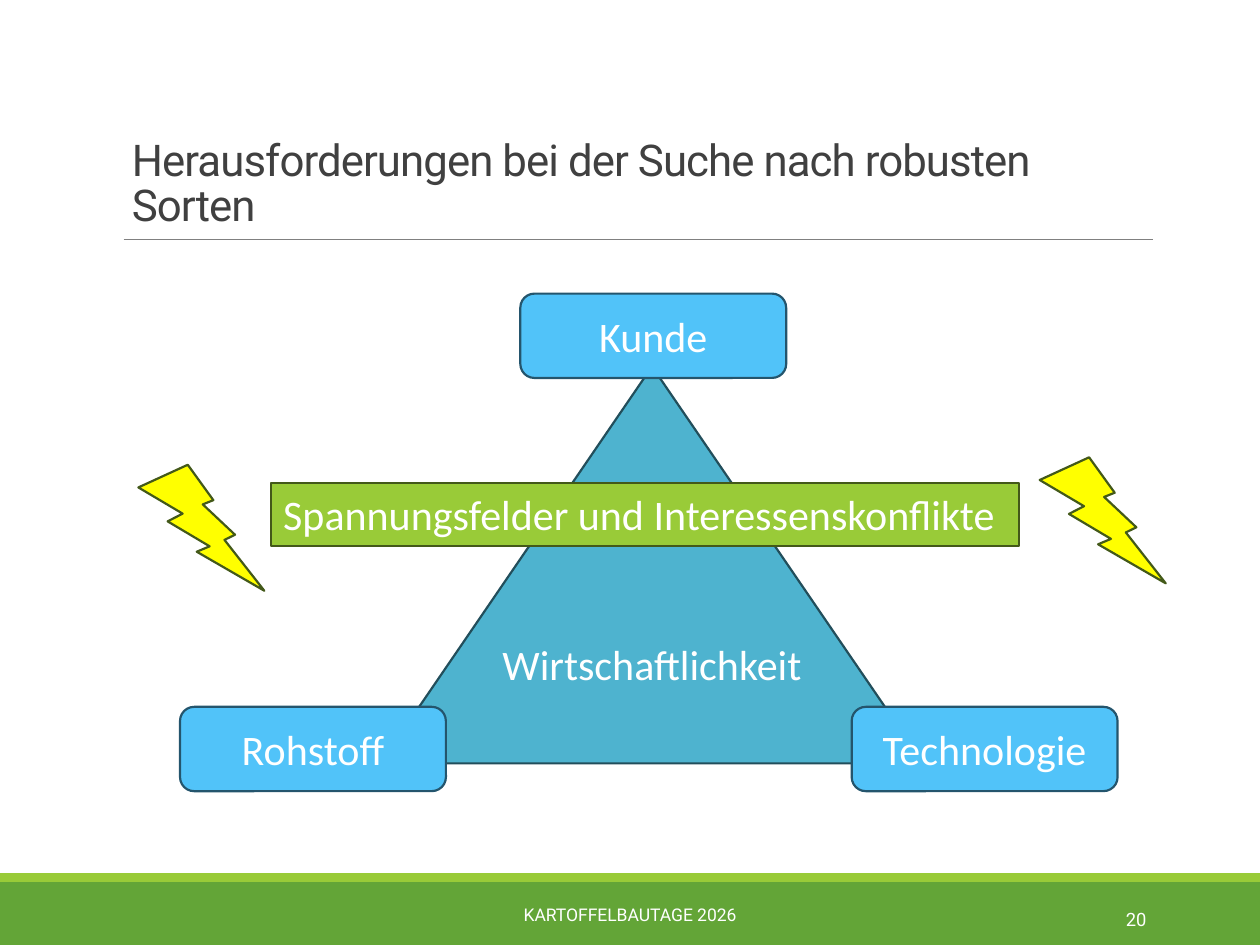
from pptx import Presentation
from pptx.util import Cm, Pt
from pptx.dml.color import RGBColor
from pptx.enum.shapes import MSO_CONNECTOR, MSO_SHAPE
from pptx.enum.text import MSO_ANCHOR, PP_ALIGN
from lxml.etree import SubElement
from pptx.oxml.ns import qn

THEME = {
    "white": "FFFFFF", "title": "404040", "rule": "808080",
    "footer": "63A537", "lime": "99CB38", "lime_line": "435919",
    "teal": "4EB3CF", "teal_line": "224E5B",
    "sky": "51C3F9", "sky_line": "24556D", "bolt": "FFFF00",
    "head_font": "Roboto", "body_font": "Calibri",
    "title_size": 25, "body_size": 24, "footer_size": 10, "number_size": 10.5,
    "line_width": 1.25, "rule_width": 0.5,
}

TITLE = "Herausforderungen bei der Suche nach robusten Sorten"
FOOTER = "KARTOFFELBAUTAGE 2026"
NUMBER = "20"
CENTRE = "Wirtschaftlichkeit"
BANNER = "Spannungsfelder und Interessenskonflikte"
CORNERS = [("Kunde", 10.49, 5.92), ("Rohstoff", 3.63, 14.25), ("Technologie", 17.17, 14.25)]
CORNER_SIZE = (5.36, 1.7)
BOLTS = [(2.79, 9.37), (20.96, 9.22)]
BOLT_SIZE = (2.54, 2.54)


def color(name):
    return RGBColor.from_string(THEME[name])


def write(sp, text, size, font="body_font", ink="white",
          align=PP_ALIGN.CENTER, anchor=MSO_ANCHOR.MIDDLE, wrap=True):
    tf = sp.text_frame
    tf.word_wrap = wrap
    tf.vertical_anchor = anchor
    p = tf.paragraphs[0]
    p.alignment = align
    r = p.add_run()
    r.text = text
    r.font.size = Pt(THEME[size])
    r.font.name = THEME[font]
    r.font.color.rgb = color(ink)
    return p, r


def add_shape(s, kind, box, fill, line=None):
    sp = s.shapes.add_shape(kind, *map(Cm, box))
    sp.shadow.inherit = False
    sp.fill.solid()
    sp.fill.fore_color.rgb = color(fill)
    if line:
        sp.line.color.rgb = color(line)
        sp.line.width = Pt(THEME["line_width"])
    else:
        sp.line.fill.background()
    return sp


def add_text(s, box, text, size, **style):
    return write(s.shapes.add_textbox(*map(Cm, box)), text, size, font="head_font", **style)


def add_frame(s):
    add_shape(s, MSO_SHAPE.RECTANGLE, (0, 17.78, 25.4, 1.27), "footer")
    add_shape(s, MSO_SHAPE.RECTANGLE, (0, 17.6, 25.4, 0.18), "lime")
    rule = s.shapes.add_connector(MSO_CONNECTOR.STRAIGHT, Cm(2.49), Cm(4.83), Cm(23.24), Cm(4.83))
    rule.line.color.rgb = color("rule")
    rule.line.width = Pt(THEME["rule_width"])
    SubElement(rule._element.spPr, qn("a:effectLst"))
    p, r = add_text(s, (2.41, 2.72, 20.96, 4.04), TITLE, "title_size", ink="title",
                    align=PP_ALIGN.LEFT, anchor=MSO_ANCHOR.TOP)
    p.line_spacing = 0.85
    r._r.get_or_add_rPr().set("spc", "-50")
    add_text(s, (7.67, 17.93, 10.06, 1.02), FOOTER, "footer_size")
    add_text(s, (20.62, 18.03, 2.74, 1.02), NUMBER, "number_size", align=PP_ALIGN.RIGHT)


def add_diagram(s):
    sp = add_shape(s, MSO_SHAPE.ISOSCELES_TRIANGLE, (7.67, 7.39, 10.95, 8), "teal", "teal_line")
    write(sp, CENTRE, "body_size", wrap=False)
    tf = sp.text_frame
    tf.margin_left = tf.margin_right = tf.margin_top = tf.margin_bottom = Cm(0.1)
    for label, x, y in CORNERS:
        sp = add_shape(s, MSO_SHAPE.FLOWCHART_ALTERNATE_PROCESS, (x, y, *CORNER_SIZE),
                       "sky", "sky_line")
        write(sp, label, "body_size")
    sp = add_shape(s, MSO_SHAPE.RECTANGLE, (5.46, 9.73, 15.09, 1.28), "lime", "lime_line")
    write(sp, BANNER, "body_size", align=PP_ALIGN.LEFT, anchor=MSO_ANCHOR.TOP)
    for x, y in BOLTS:
        add_shape(s, MSO_SHAPE.LIGHTNING_BOLT, (x, y, *BOLT_SIZE), "bolt", "lime_line")


def main():
    prs = Presentation()
    prs.slide_width, prs.slide_height = Cm(25.4), Cm(19.05)
    s = prs.slides.add_slide(prs.slide_layouts[6])
    add_frame(s)
    add_diagram(s)
    prs.save("out.pptx")


if __name__ == "__main__":
    main()
